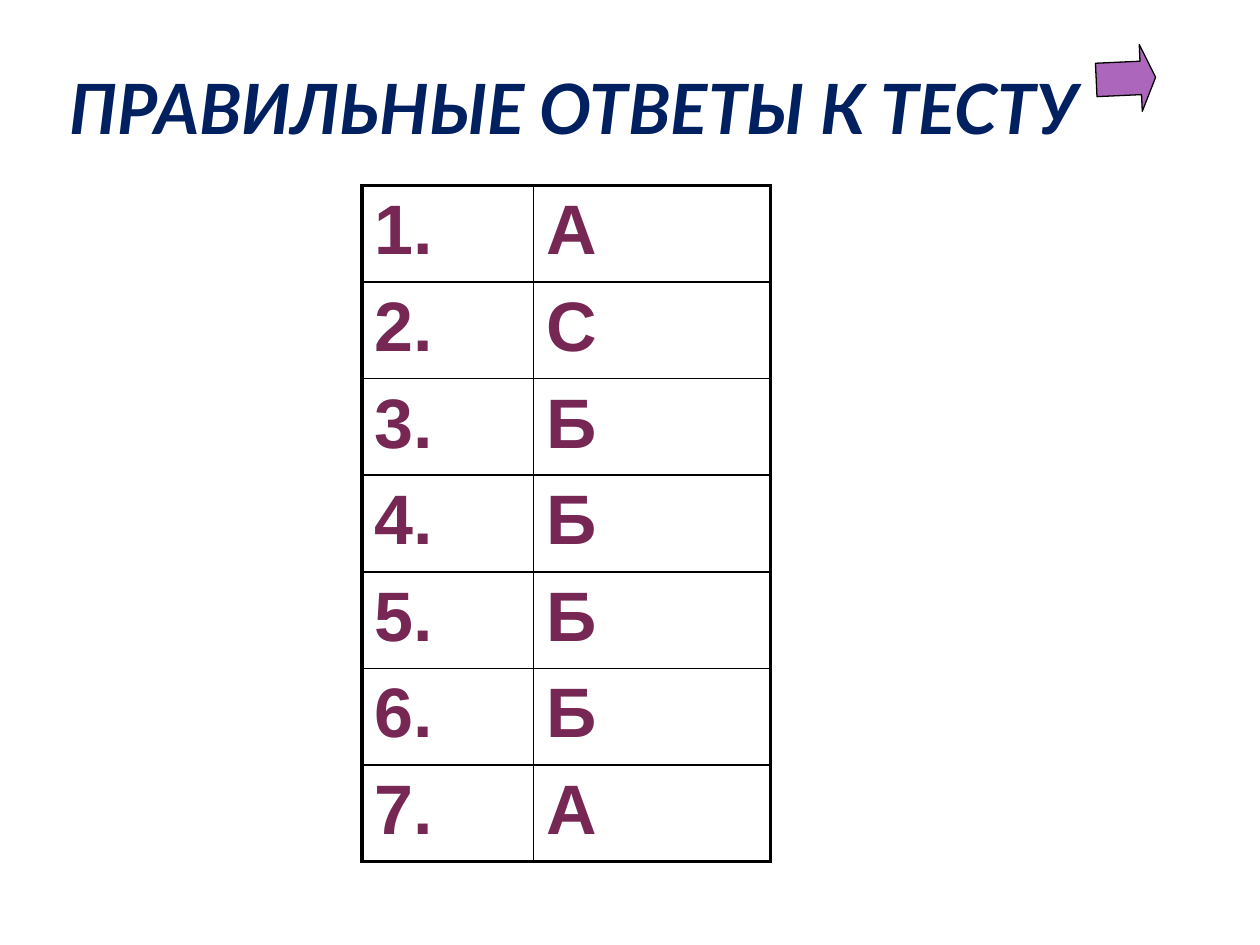
import pptx
import pptx.dml.color
import pptx.enum.shapes
import pptx.enum.text
import pptx.oxml
import pptx.oxml.ns
import pptx.util

Pt = pptx.util.Pt

# Content
TITLE = "ПРАВИЛЬНЫЕ ОТВЕТЫ К ТЕСТУ"
ANSWERS = ["А", "С", "Б", "Б", "Б", "Б", "А"]

# Look
COLORS = {"title": "002060", "answer": "772754", "arrow": "AC66BB", "line": "000000"}
TITLE_FONT = {"name": "Lato", "size": Pt(39.6), "bold": True, "italic": True}
ANSWER_FONT = {"name": "Arial", "size": Pt(40), "bold": True}
TITLE_FRAME = {
    "margin_left": Pt(3.6), "margin_right": Pt(3.6), "margin_top": 0, "margin_bottom": 0,
    "vertical_anchor": pptx.enum.text.MSO_ANCHOR.BOTTOM, "word_wrap": True,
    "auto_size": pptx.enum.text.MSO_AUTO_SIZE.NONE,
}
COLUMN_WIDTHS = [98, 135.4]
ROW_HEIGHT = 55.2
OUTER_LINE, INNER_LINE = 2.25, 1


def rgb(name):
    return pptx.dml.color.RGBColor.from_string(COLORS[name])


def set_values(target, values):
    for name, value in values.items():
        setattr(target, name, value)


def place(shape, left, top, width, height):
    set_values(shape, {"left": Pt(left), "top": Pt(top),
                       "width": Pt(width), "height": Pt(height)})


def format_font(font, values, color):
    set_values(font, values)
    font.color.rgb = rgb(color)


def set_borders(cell, widths):
    """Put the border lines ahead of the fill, in the order left, right, top, bottom."""
    properties = cell._tc.get_or_add_tcPr()
    for index, (side, width) in enumerate(widths.items()):
        line = pptx.oxml.parse_xml(
            f'<a:ln{side} {pptx.oxml.ns.nsdecls("a")} w="{Pt(width)}">'
            f'<a:solidFill><a:srgbClr val="{COLORS["line"]}"/></a:solidFill>'
            f'<a:prstDash val="solid"/></a:ln{side}>')
        properties.insert(index, line)


deck = pptx.Presentation()
deck.slide_width, deck.slide_height = Pt(720), Pt(540)
slide = deck.slides.add_slide(deck.slide_layouts[5])

# Title
title = slide.shapes.title
place(title, 36, 30, 648, 55)
set_values(title.text_frame, TITLE_FRAME)
para = title.text_frame.paragraphs[0]
para.alignment = pptx.enum.text.PP_ALIGN.LEFT
span = para.add_run()
span.text = TITLE
format_font(span.font, TITLE_FONT, "title")

# Answer table
row_count, column_count = len(ANSWERS), len(COLUMN_WIDTHS)
table = slide.shapes.add_table(
    row_count, column_count, Pt(206.9), Pt(106),
    Pt(sum(COLUMN_WIDTHS)), Pt(ROW_HEIGHT * row_count)).table
set_values(table, {"first_row": False, "horz_banding": False})
for column, width in zip(table.columns, COLUMN_WIDTHS):
    column.width = Pt(width)
for row_index, answer in enumerate(ANSWERS):
    table.rows[row_index].height = Pt(ROW_HEIGHT)
    for column_index, text in enumerate([f"{row_index + 1}.", answer]):
        cell = table.cell(row_index, column_index)
        cell.fill.background()
        span = cell.text_frame.paragraphs[0].add_run()
        span.text = text
        format_font(span.font, ANSWER_FONT, "answer")
        at_edge = {"L": column_index == 0, "R": column_index == column_count - 1,
                   "T": row_index == 0, "B": row_index == row_count - 1}
        set_borders(cell, {side: OUTER_LINE if edge else INNER_LINE
                           for side, edge in at_edge.items()})

# Arrow to the next slide
arrow = slide.shapes.add_shape(
    pptx.enum.shapes.MSO_SHAPE.RIGHT_ARROW, Pt(626.4), Pt(25.8), Pt(34), Pt(38.2))
arrow.adjustments[0], arrow.adjustments[1] = 0.5, 0.25
arrow.rotation = 357.4
arrow.shadow.inherit = False
arrow.fill.solid()
arrow.fill.fore_color.rgb = rgb("arrow")
arrow.line.color.rgb = rgb("line")
arrow.line.width = Pt(0.75)

deck.save("out.pptx")
